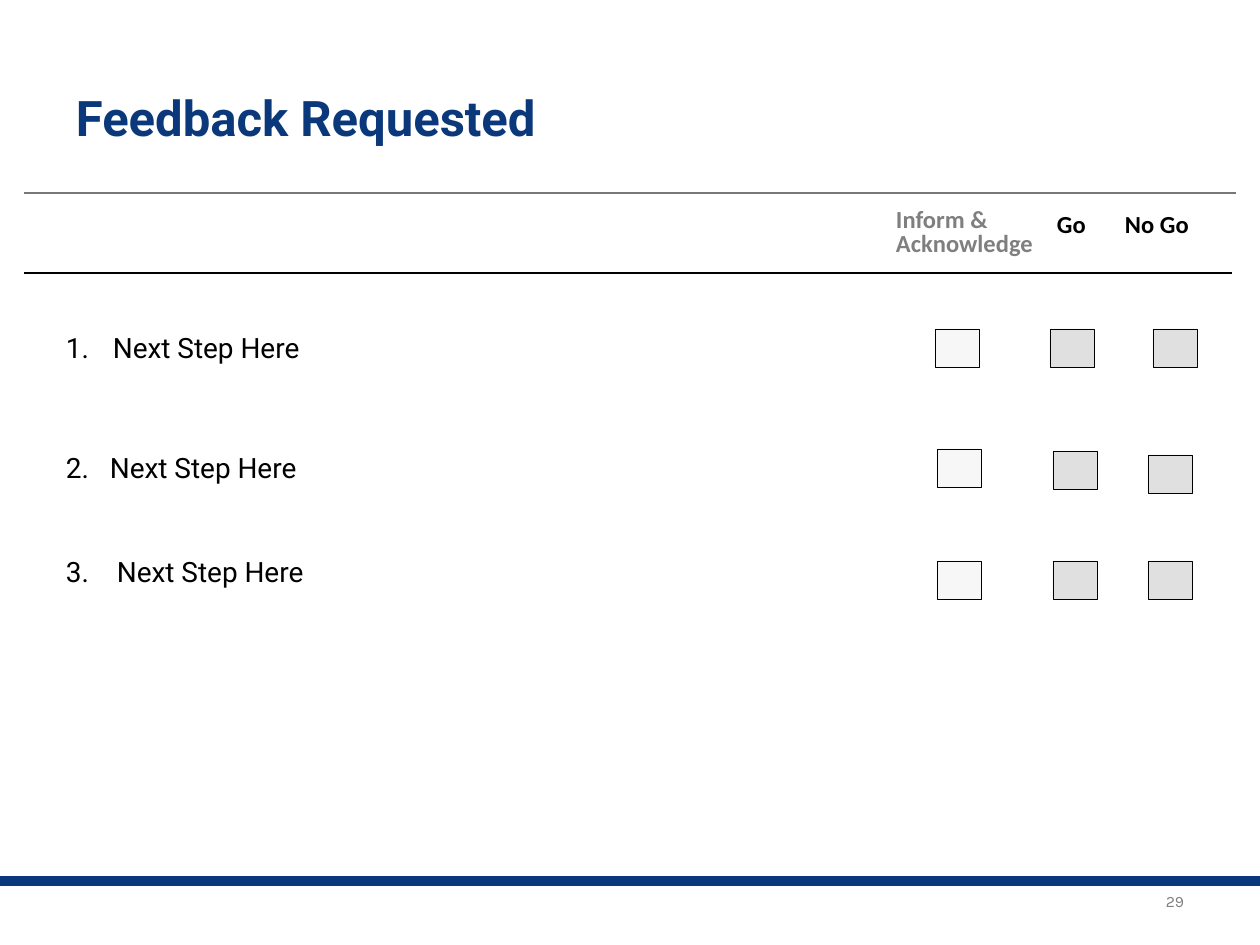
from dataclasses import dataclass

from lxml import etree
from pptx import Presentation
from pptx.dml.color import RGBColor
from pptx.enum.shapes import MSO_CONNECTOR, MSO_SHAPE
from pptx.enum.text import MSO_ANCHOR, PP_ALIGN
from pptx.oxml.ns import qn
from pptx.util import Emu, Pt

LINE, RECT = MSO_CONNECTOR.STRAIGHT, MSO_SHAPE.RECTANGLE
TOP, MIDDLE = MSO_ANCHOR.TOP, MSO_ANCHOR.MIDDLE
LEFT, RIGHT = PP_ALIGN.LEFT, PP_ALIGN.RIGHT
SCALE = 914400 // 126


@dataclass(frozen=True)
class Theme:
    navy: str = "0A387A"
    black: str = "000000"
    gray: str = "7F7F7F"
    rule: str = "777777"
    pale: str = "BFBFBF"
    body: str = "Roboto"
    header: str = "Calibri"
    footer: str = "Karla"
    title_size: int = 28
    step_size: int = 16
    header_size: int = 14
    footer_size: int = 9


T = Theme()

TITLE = "Feedback Requested"
PAGE = "29"
# text, box, colour
HEADERS = [
    ("Inform & Acknowledge", (892, 205, 147, 58), T.gray),
    ("Go", (1053, 210, 49, 34), T.black),
    ("No Go", (1121, 210, 107, 33), T.black),
]
# text, top, hanging indent, top left corners of the check boxes
STEPS = [
    ("Next Step Here", 325, 47, [(935, 329), (1050, 329), (1153, 329)]),
    ("Next Step Here", 445, 44, [(937, 449), (1053, 451), (1148, 455)]),
    ("Next Step Here", 549, 51, [(937, 561), (1053, 561), (1148, 561)]),
]
BOX_COLORS = (T.pale, T.black, T.black)
BOX_W, BOX_H = 44, 38
BOX_ALPHA = 12
# left, right, y, colour, points
RULES = [
    (0, 1260, 881, T.navy, 6),
    (24, 1236, 193, T.rule, 1.25),
    (24, 1232, 273, T.black, 0.75),
]


def px(n):
    return Emu(n * SCALE)


def add_rule(slide, left, right, y, color, width):
    line = slide.shapes.add_connector(LINE, px(left), px(y), px(right), px(y))
    line.line.color.rgb = RGBColor.from_string(color)
    line.line.width = Pt(width)
    etree.SubElement(line._element.spPr, qn("a:effectLst"))


def add_text(slide, text, box, font, size, color, bold=False,
             align=LEFT, anchor=TOP, inset=(13, 6)):
    tf = slide.shapes.add_textbox(*map(px, box)).text_frame
    tf.word_wrap = True
    tf.vertical_anchor = anchor
    tf.margin_left = tf.margin_right = px(inset[0])
    tf.margin_top = tf.margin_bottom = px(inset[1])
    tf.text = text
    p = tf.paragraphs[0]
    p.alignment = align
    f = p.runs[0].font
    f.name, f.size, f.bold = font, Pt(size), bold
    f.color.rgb = RGBColor.from_string(color)
    return p


def number_paragraph(p, number, indent):
    pPr = p._p.get_or_add_pPr()
    pPr.set("marL", str(px(indent)))
    pPr.set("indent", str(-px(indent)))
    bullet = etree.SubElement(pPr, qn("a:buAutoNum"), type="arabicPeriod")
    bullet.set("startAt", str(number))


def add_check_box(slide, left, top, color):
    sp = slide.shapes.add_shape(RECT, px(left), px(top), px(BOX_W), px(BOX_H))
    sp.shadow.inherit = False
    sp.fill.solid()
    sp.fill.fore_color.rgb = RGBColor.from_string(color)
    clr = sp._element.spPr.find(qn("a:solidFill"))[0]
    etree.SubElement(clr, qn("a:alpha"), val=str(BOX_ALPHA * 1000))
    sp.line.color.rgb = RGBColor.from_string(T.black)
    sp.line.width = Pt(0.25)


def main():
    prs = Presentation()
    prs.slide_width, prs.slide_height = px(1260), px(945)
    slide = prs.slides.add_slide(prs.slide_layouts[6])

    for rule in RULES:
        add_rule(slide, *rule)
    add_text(slide, TITLE, (63, 38, 1134, 158), T.body, T.title_size, T.navy,
             bold=True, anchor=MIDDLE)
    for text, box, color in HEADERS:
        p = add_text(slide, text, box, T.header, T.header_size, color,
                     bold=True, inset=(4, 5))
        p.line_spacing = 0.8
    for number, (text, top, indent, corners) in enumerate(STEPS, 1):
        p = add_text(slide, text, (53, top, 857, 47), T.body, T.step_size, T.black)
        number_paragraph(p, number, indent)
        for (left, box_top), color in zip(corners, BOX_COLORS):
            add_check_box(slide, left, box_top, color)
    add_text(slide, PAGE, (903, 882, 294, 39), T.footer, T.footer_size, T.gray,
             align=RIGHT, anchor=MIDDLE)

    prs.save("out.pptx")


if __name__ == "__main__":
    main()
